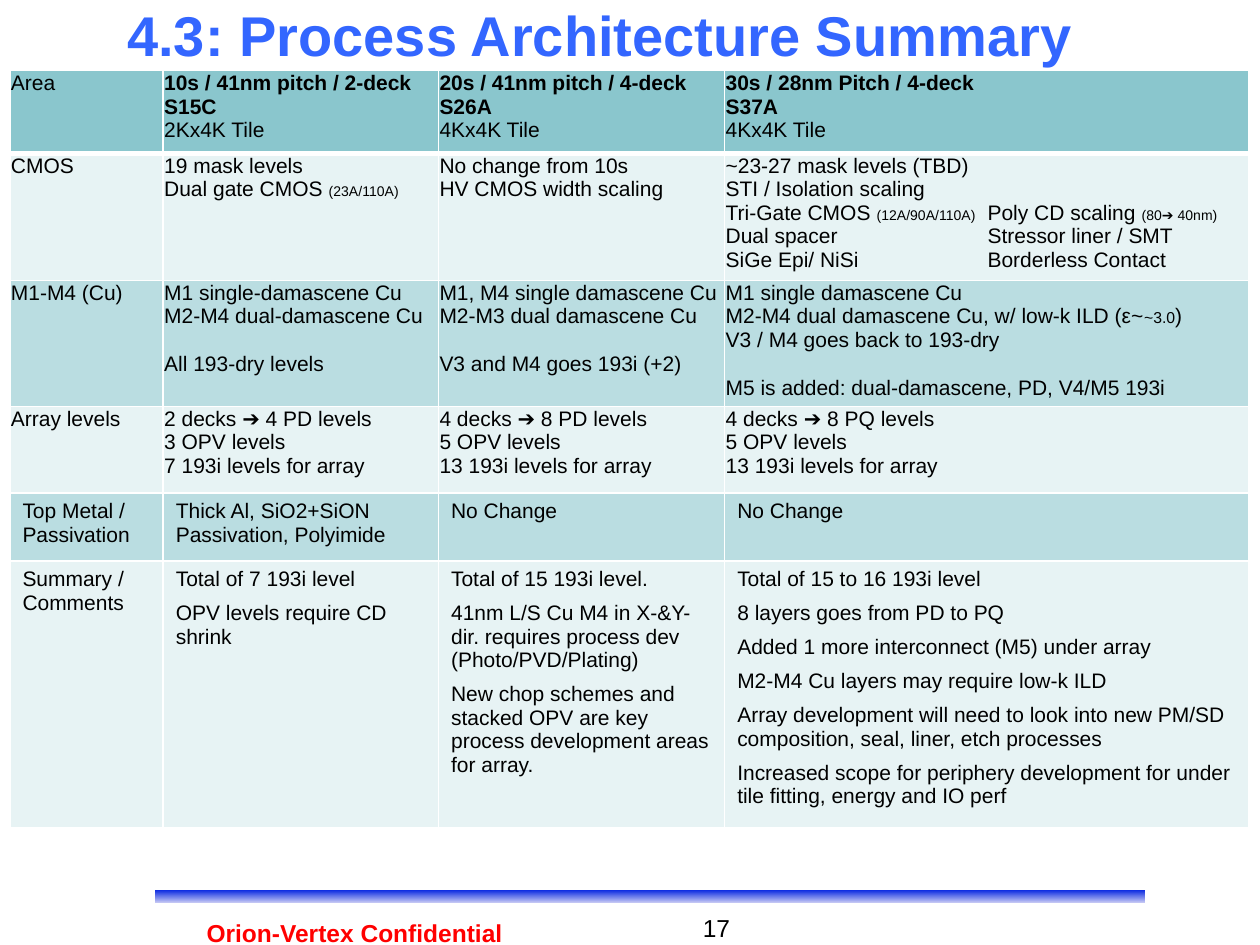
"""Build the process architecture summary slide."""
from lxml import etree
from pptx import Presentation
from pptx.dml.color import RGBColor
from pptx.enum.shapes import MSO_SHAPE
from pptx.enum.text import MSO_ANCHOR, MSO_AUTO_SIZE, PP_ALIGN
from pptx.oxml import parse_xml
from pptx.oxml.ns import qn
from pptx.util import Cm, Pt

CENTER, RIGHT = PP_ALIGN.CENTER, PP_ALIGN.RIGHT
MIDDLE, FIXED = MSO_ANCHOR.MIDDLE, MSO_AUTO_SIZE.NONE
RECT = MSO_SHAPE.RECTANGLE

HUE = {
    "head": "8AC6CD", "dark": "BADDE1", "light": "E7F3F4",
    "title": "3366FF", "red": "FF0000", "black": "000000",
    "white": "FFFFFF", "from": "0020E0", "to": "DADAF6",
}
FONT = "Arial"
TITLE = "4.3: Process Architecture Summary"
NOTES = [
    ("Orion-Vertex Confidential", (3.1, 18.39, 8.1, 0.66), CENTER, "red", True),
    ("17", (12.07, 18.29, 2.9, 0.69), RIGHT, "black", False),
]
ROWS = [
    [["Area"],
     ["10s / 41nm pitch / 2-deck", "S15C", "2Kx4K Tile"],
     ["20s / 41nm pitch / 4-deck", "S26A", "4Kx4K Tile"],
     ["30s / 28nm Pitch / 4-deck", "S37A", "4Kx4K Tile"]],
    [["CMOS"],
     ["19 mask levels", [("Dual gate CMOS ", 12), ("(23A/110A)", 8)]],
     ["No change from 10s", "HV CMOS width scaling"],
     ["~23-27 mask levels (TBD)", "STI / Isolation scaling",
      [("Tri-Gate CMOS ", 12), ("(12A/90A/110A)", 8),
       ("\tPoly CD scaling ", 12), ("(80➔ 40nm)", 8)],
      "Dual spacer\tStressor liner / SMT",
      "SiGe Epi/ NiSi\tBorderless Contact"]],
    [["M1-M4 (Cu)"],
     ["M1 single-damascene Cu", "M2-M4 dual-damascene Cu", "All 193-dry levels"],
     ["M1, M4 single damascene Cu", "M2-M3 dual damascene Cu",
      "V3 and M4 goes 193i (+2)"],
     ["M1 single damascene Cu",
      [("M2-M4 dual damascene Cu, w/ low-k ILD (ε~", 12), ("~3.0", 9), (")", 12)],
      "V3 / M4 goes back to 193-dry",
      "M5 is added: dual-damascene, PD, V4/M5 193i"]],
    [["Array levels"],
     ["2 decks ➔ 4 PD levels", "3 OPV levels", "7 193i levels for array"],
     ["4 decks ➔ 8 PD levels", "5 OPV levels", "13 193i levels for array"],
     ["4 decks ➔ 8 PQ levels", "5 OPV levels", "13 193i levels for array"]],
    [["Top Metal /", "Passivation"],
     ["Thick Al, SiO2+SiON Passivation, Polyimide"],
     ["No Change"],
     ["No Change"]],
    [["Summary /", "Comments"],
     ["Total of 7 193i level", "OPV levels require CD shrink"],
     ["Total of 15 193i level.",
      "41nm L/S Cu M4 in X-&Y-dir. requires process dev (Photo/PVD/Plating)",
      "New chop schemes and stacked OPV are key process development areas for array."],
     ["Total of 15 to 16 193i level", "8 layers goes from PD to PQ",
      "Added 1 more interconnect (M5) under array",
      "M2-M4 Cu layers may require low-k ILD",
      "Array development will need to look into new PM/SD composition, seal, "
      "liner, etch processes",
      "Increased scope for periphery development for under tile fitting, "
      "energy and IO perf"]],
]
WIDE = [3.09, 5.55, 5.77, 10.57]
HIGH = [1.67, 2.39, 2.39, 1.75, 1.37, 5.1]
HEAD, METAL, LAST = 0, 2, 5
TIGHT = 4
TAB = 5.28
RULE = (
    '<a:lnB xmlns:a="http://schemas.openxmlformats.org/drawingml/2006/main" w="38100">'
    f'<a:solidFill><a:srgbClr val="{HUE["white"]}"/></a:solidFill></a:lnB>'
)


def color(name):
    """Return a named colour."""
    return RGBColor.from_string(HUE[name])


def style(para, size, hue="black", bold=False):
    """Set the font of a paragraph."""
    font = para.font
    font.name, font.size, font.bold = FONT, Pt(size), bold
    font.color.rgb = color(hue)


def write(para, text):
    """Write plain text or sized runs, with a tab stop where needed."""
    parts = [(text, None)] if isinstance(text, str) else text
    if any("\t" in part for part, _ in parts):
        props = para._p.get_or_add_pPr()
        tabs = etree.SubElement(props, qn("a:tabLst"))
        etree.SubElement(tabs, qn("a:tab"), pos=str(int(Cm(TAB))), algn="l")
    for part, size in parts:
        run = para.add_run()
        run.text = part
        if size:
            run.font.size = Pt(size)


def fill_cell(cell, lines, row, col):
    """Fill one table cell."""
    if row == HEAD:
        cell._tc.get_or_add_tcPr().insert(0, parse_xml(RULE))
    if row < TIGHT:
        cell.margin_left = cell.margin_right = cell.margin_top = Cm(0.02)
        cell.margin_bottom = 0
    cell.fill.solid()
    shade = "head" if row == HEAD else "light" if row % 2 else "dark"
    cell.fill.fore_color.rgb = color(shade)
    frame = cell.text_frame
    for i, text in enumerate(lines):
        para = frame.add_paragraph() if i else frame.paragraphs[0]
        write(para, text)
        style(para, 12, bold=row == HEAD and col > 0 and i < 2)
        if row == METAL and i and i == len(lines) - 1:
            para.space_before = Pt(13.8)
        if row == LAST and col:
            para.space_after = Pt(6)


def add_grid(slide):
    """Add the summary table."""
    grid = slide.shapes.add_table(
        len(ROWS), len(WIDE), Cm(0.2), Cm(1.42), Cm(sum(WIDE)), Cm(sum(HIGH))).table
    grid.first_row = grid.horz_banding = False
    for col, wide in zip(grid.columns, WIDE):
        col.width = Cm(wide)
    for r, (high, cells) in enumerate(zip(HIGH, ROWS)):
        grid.rows[r].height = Cm(high)
        for c, lines in enumerate(cells):
            fill_cell(grid.cell(r, c), lines, r, c)


def add_bar(slide):
    """Add the shaded bar above the footer."""
    bar = slide.shapes.add_shape(RECT, Cm(3.1), Cm(17.93), Cm(20), Cm(0.3))
    bar.shadow.inherit = False
    bar.fill.gradient()
    bar.fill.gradient_angle = 270
    for stop, name, spot in zip(bar.fill.gradient_stops, ("from", "to"), (0, 1)):
        stop.color.rgb, stop.position = color(name), spot
    bar.line.color.rgb, bar.line.width = color("white"), Pt(1)


def main():
    """Build and save the slide."""
    deck = Presentation()
    deck.slide_width, deck.slide_height = Cm(25.4), Cm(19.05)
    slide = deck.slides.add_slide(deck.slide_layouts[5])
    add_bar(slide)
    for text, spot, align, hue, bold in NOTES:
        frame = slide.shapes.add_textbox(*map(Cm, spot)).text_frame
        frame.word_wrap = True
        para = frame.paragraphs[0]
        write(para, text)
        style(para, 14, hue, bold)
        para.alignment = align
    title = slide.shapes.title
    title.left, title.top, title.width, title.height = map(Cm, (-1.24, -0.1, 26.67, 1.57))
    frame = title.text_frame
    frame.auto_size, frame.vertical_anchor = FIXED, MIDDLE
    para = frame.paragraphs[0]
    write(para, TITLE)
    style(para, 32, "title", True)
    para.alignment = CENTER
    add_grid(slide)
    deck.save("out.pptx")


if __name__ == "__main__":
    main()
